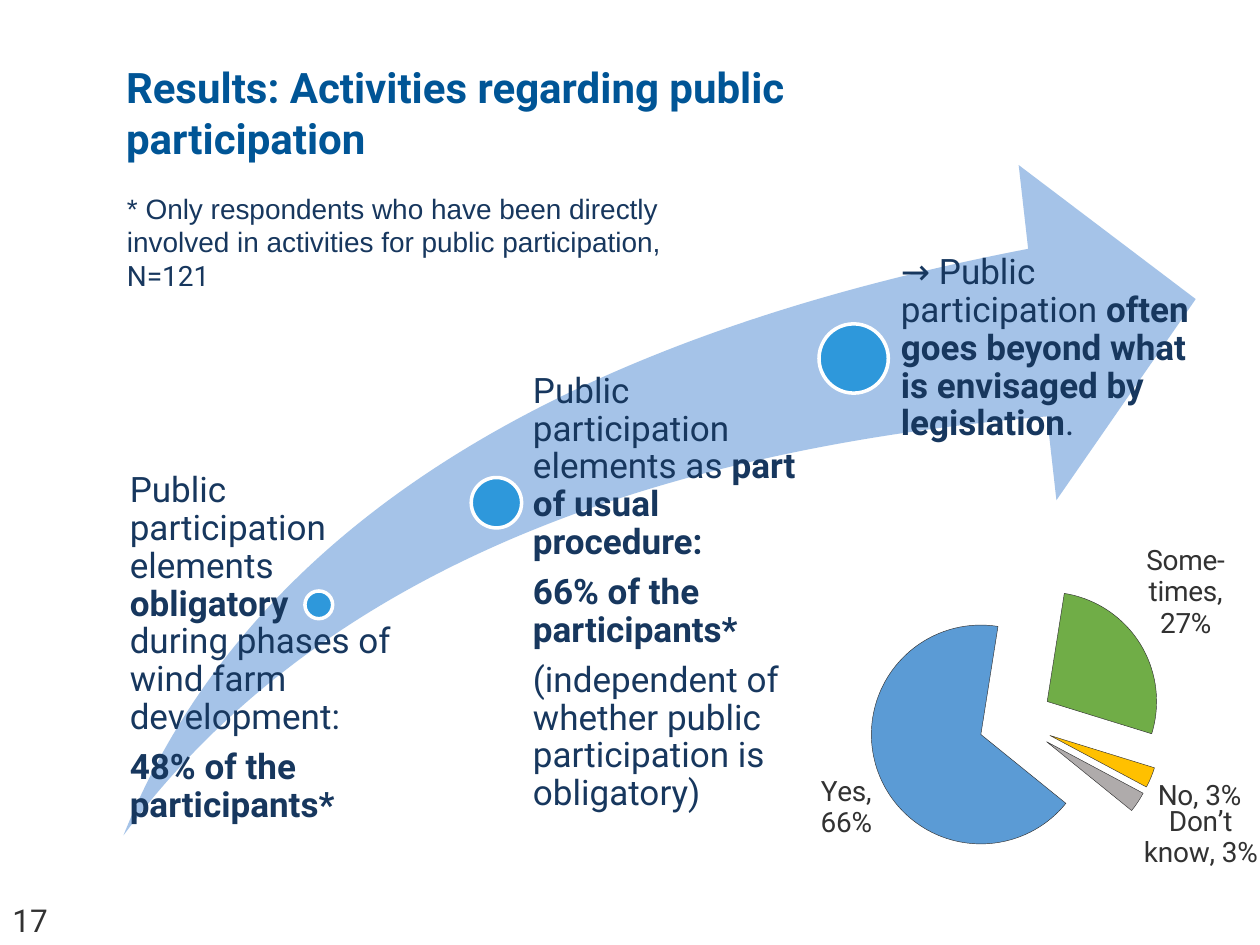
from dataclasses import dataclass

from lxml import etree
from pptx import Presentation
from pptx.chart.data import CategoryChartData
from pptx.dml.color import RGBColor
from pptx.enum.chart import XL_CHART_TYPE, XL_LABEL_POSITION
from pptx.enum.shapes import MSO_SHAPE
from pptx.enum.text import MSO_ANCHOR, MSO_AUTO_SIZE, PP_ALIGN
from pptx.oxml.ns import qn
from pptx.util import Inches, Pt

PIE = XL_CHART_TYPE.PIE
OUTSIDE_END = XL_LABEL_POSITION.OUTSIDE_END
OVAL, SWOOSH = MSO_SHAPE.OVAL, MSO_SHAPE.SWOOSH_ARROW
TOP, LEFT, NO_FIT = MSO_ANCHOR.TOP, PP_ALIGN.LEFT, MSO_AUTO_SIZE.NONE
TITLE_ONLY = 5

Box = tuple[float, float, float, float]
Run = tuple[str, bool]


@dataclass(frozen=True)
class Theme:
    font: str = "Roboto"
    note_font: str = "Arial"
    title: str = "005596"
    navy: str = "17375E"
    grey: str = "323232"
    arrow: str = "6C9EDA"
    dot: str = "2E98DB"
    white: str = "FFFFFF"
    title_size: int = 24
    body_size: int = 20
    number_size: int = 18
    small_size: int = 16


@dataclass(frozen=True)
class Milestone:
    dot: tuple[float, float, float]
    box: Box
    inset: float
    paragraphs: list[list[Run]]


@dataclass(frozen=True)
class Slice:
    label: str
    value: float
    color: str


THEME = Theme()

MILESTONES = [
    Milestone((2.42, 4.69, 0.22), (0.91, 3.75, 2.21, 1.54), 0.12, [
        [("Public participation elements ", False), ("obligatory ", True),
         ("during phases of wind farm development:", False)],
        [("48% of the participants*", True)],
    ]),
    Milestone((3.74, 3.79, 0.4), (4.02, 2.96, 2.48, 2.58), 0.21, [
        [("Public participation elements as ", False), ("part of usual procedure:", True)],
        [("66% of the participants*", True)],
        [("(independent of whether public participation is obligatory)", False)],
    ]),
    Milestone((6.5, 2.57, 0.55), (6.86, 2.02, 2.63, 2.71), 0.29, [
        [("→ Public participation ", False),
         ("often goes beyond what is envisaged by legislation", True), (".", False)],
    ]),
]

SLICES = [
    Slice("Yes, 66%", 0.66, "5B9BD5"),
    Slice("Some-times, 27%", 0.27, "70AD47"),
    Slice("No, 3%", 0.03, "FFC000"),
    Slice("Don’t know, 3%", 0.03, "AFABAB"),
]


def rgb(value: str) -> RGBColor:
    return RGBColor.from_string(value)


def add_run(p, text: str, *, size: int, color: str, font: str = THEME.font, bold: bool = False):
    r = p.add_run()
    r.text = text
    r.font.name, r.font.size, r.font.bold = font, Pt(size), bold
    r.font.color.rgb = rgb(color)
    return r


def place(sp, box: Box) -> None:
    sp.left, sp.top, sp.width, sp.height = map(Inches, box)


def add_box(s, box: Box):
    tf = s.shapes.add_textbox(*map(Inches, box)).text_frame
    tf.word_wrap = True
    return tf


def add_shape(s, kind, box: Box, fill: str):
    sp = s.shapes.add_shape(kind, *map(Inches, box))
    sp.shadow.inherit = False
    sp.fill.solid()
    sp.fill.fore_color.rgb = rgb(fill)
    sp.line.fill.background()
    return sp


def add_title(s, text: str) -> None:
    title = s.shapes.title
    place(title, (0.9, 0.44, 7.38, 0.71))
    tf = title.text_frame
    tf.word_wrap, tf.auto_size, tf.vertical_anchor = True, NO_FIT, TOP
    p = tf.paragraphs[0]
    p.alignment = LEFT
    add_run(p, text, size=THEME.title_size, color=THEME.title, bold=True)


def add_arrow(s) -> None:
    sp = add_shape(s, SWOOSH, (0.98, 1.31, 8.51, 5.32), THEME.arrow)
    sp.adjustments[0] = sp.adjustments[1] = 0.25
    color = sp._element.spPr.find(f"{qn('a:solidFill')}/{qn('a:srgbClr')}")
    etree.SubElement(color, qn("a:alpha"), val="61000")


def add_milestone(s, m: Milestone) -> None:
    x, y, size = m.dot
    dot = add_shape(s, OVAL, (x, y, size, size), THEME.dot)
    dot.line.color.rgb = rgb(THEME.white)
    dot.line.width = Pt(2)
    tf = add_box(s, m.box)
    tf.margin_left = Inches(m.inset)
    tf.margin_top = tf.margin_right = tf.margin_bottom = 0
    for i, runs in enumerate(m.paragraphs):
        p = tf.add_paragraph() if i else tf.paragraphs[0]
        p.line_spacing, p.space_after = 0.9, Pt(7)
        for text, bold in runs:
            add_run(p, text, size=THEME.body_size, color=THEME.navy, bold=bold)


def manual_layout(**values) -> etree._Element:
    """Build a chart layout element from its children in schema order."""
    layout = etree.Element(qn("c:layout"))
    manual = etree.SubElement(layout, qn("c:manualLayout"))
    for tag, value in values.items():
        etree.SubElement(manual, qn(f"c:{tag}"), val=str(value))
    return layout


def format_slice(point, item: Slice) -> None:
    point.format.fill.solid()
    point.format.fill.fore_color.rgb = rgb(item.color)
    point.format.line.color.rgb = rgb(THEME.grey)
    point.format.line.width = Pt(0.25)
    label = point.data_label
    tf = label.text_frame
    tf.word_wrap = True
    add_run(tf.paragraphs[0], item.label, size=THEME.small_size, color=THEME.grey)
    label.position = OUTSIDE_END


def add_pie(s) -> None:
    data = CategoryChartData(number_format="0%")
    data.categories = [str(i) for i in range(1, len(SLICES) + 1)]
    data.add_series("Series 1", [item.value for item in SLICES])
    box = map(Inches, (6.46, 3.75, 4.85, 3.91))
    chart = s.shapes.add_chart(PIE, *box, data).chart
    chart.has_title = chart.has_legend = False
    chart.font.name, chart.font.size = THEME.font, Pt(THEME.small_size)
    chart.font.color.rgb = rgb(THEME.grey)

    series = chart.plots[0].series[0]
    series.format.line.color.rgb = rgb(THEME.grey)
    series.format.line.width = Pt(0.25)
    explosion = etree.Element(qn("c:explosion"), val="34")
    series._element.find(qn("c:spPr")).addnext(explosion)
    for i, item in enumerate(SLICES):
        format_slice(series.points[i], item)
    labels = series.data_labels
    labels.show_value = True
    labels.number_format, labels.number_format_is_linked = "0%", False
    labels.position = OUTSIDE_END

    pie = series._element.getparent()
    for old in pie.findall(qn("c:firstSliceAng")):
        pie.remove(old)
    etree.SubElement(pie, qn("c:firstSliceAng"), val="129")
    area = pie.getparent()
    for old in area.findall(qn("c:layout")):
        area.remove(old)
    area.insert(0, manual_layout(layoutTarget="inner", xMode="edge", yMode="edge",
                                 x=0.09, y=0.12, w=0.48, h=0.77))


def main() -> None:
    prs = Presentation()
    prs.slide_width, prs.slide_height = Inches(10), Inches(7.5)
    s = prs.slides.add_slide(prs.slide_layouts[TITLE_ONLY])
    add_title(s, "Results: Activities regarding public participation")
    number = add_box(s, (0, 7.1, 0.75, 0.4))
    add_run(number.paragraphs[0], "17", size=THEME.number_size, color=THEME.grey)
    add_pie(s)
    add_arrow(s)
    for m in MILESTONES:
        add_milestone(s, m)
    note = add_box(s, (0.91, 1.47, 5, 1.18)).paragraphs[0]
    add_run(note, "* Only respondents who have been directly involved in activities "
            "for public participation, ",
            size=THEME.small_size, color=THEME.navy, font=THEME.note_font)
    add_run(note, "N=121", size=THEME.small_size, color=THEME.navy)
    prs.save("out.pptx")


if __name__ == "__main__":
    main()
